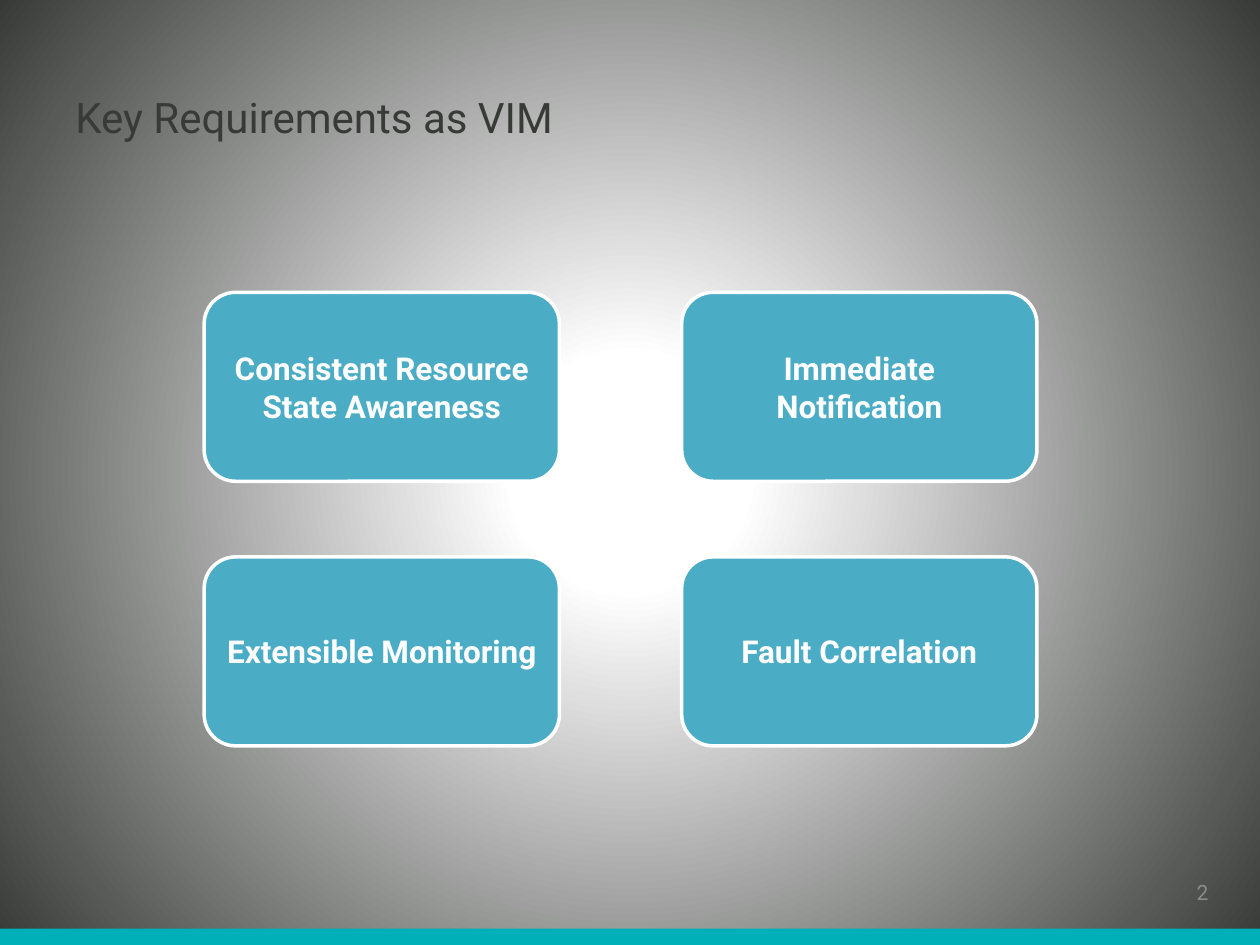
from itertools import product

from pptx import Presentation
from pptx.dml.color import RGBColor
from pptx.enum.shapes import MSO_SHAPE as Shape
from pptx.enum.text import MSO_ANCHOR as Anchor, PP_ALIGN as Align
from pptx.oxml import parse_xml
from pptx.oxml.ns import nsdecls
from pptx.util import Inches, Pt

WHITE = RGBColor(0xFF, 0xFF, 0xFF)
DARK = RGBColor(0x37, 0x3A, 0x36)
GRAY = RGBColor(0x8C, 0x8C, 0x8C)
TEAL = RGBColor(0x00, 0xB0, 0xB9)
BLUE = RGBColor(0x4B, 0xAC, 0xC6)

COLS, ROWS = 100, 75  # layout grid of the slide


class Deck:
    """Holds the style and the current slide; lengths are grid columns and rows."""

    font = "Roboto"

    def __init__(self, prs):
        self.col = prs.slide_width / COLS
        self.row = prs.slide_height / ROWS
        self.slide = prs.slides.add_slide(prs.slide_layouts[6])

    def place(self, x, y, w, h):
        return [int(v) for v in (x * self.col, y * self.row, w * self.col, h * self.row)]

    def background(self, inner, outer, start):
        """Radial gradient spreading from the middle of the slide."""
        self.slide.background.fill.solid()
        fill = self.slide.element.cSld.find(".//{*}bgPr/{*}solidFill")
        gradient = parse_xml(
            f'<a:gradFill {nsdecls("a")} rotWithShape="1"><a:gsLst>'
            f'<a:gs pos="{start * 1000}"><a:srgbClr val="{inner}"/></a:gs>'
            f'<a:gs pos="100000"><a:srgbClr val="{outer}"/></a:gs></a:gsLst>'
            '<a:path path="circle"><a:fillToRect l="50000" t="50000" r="50000" b="50000"/>'
            '</a:path></a:gradFill>')
        fill.getparent().replace(fill, gradient)

    def set_text(self, sp, text, color, size, align=Align.LEFT, anchor=Anchor.MIDDLE,
                 bold=False, inset=0.1):
        tf = sp.text_frame
        frame = {"word_wrap": True, "vertical_anchor": anchor,
                 "margin_left": Inches(inset), "margin_right": Inches(inset)}
        for name, value in frame.items():
            setattr(tf, name, value)
        p = tf.paragraphs[0]
        p.alignment = align
        r = p.add_run()
        r.text = text
        for name, value in {"name": self.font, "size": Pt(size), "bold": bold}.items():
            setattr(r.font, name, value)
        r.font.color.rgb = color

    def text(self, at, text, **style):
        self.set_text(self.slide.shapes.add_textbox(*self.place(*at)), text, **style)

    def shape(self, kind, at, fill, line=None):
        sp = self.slide.shapes.add_shape(kind, *self.place(*at))
        sp.shadow.inherit = False
        sp.fill.solid()
        sp.fill.fore_color.rgb = fill
        if line is None:
            sp.line.fill.background()
        else:
            sp.line.color.rgb = line
            sp.line.width = Pt(2)
        return sp

    def card(self, at, text):
        sp = self.shape(Shape.ROUNDED_RECTANGLE, at, BLUE, WHITE)
        self.set_text(sp, text, WHITE, 18, Align.CENTER, bold=True, inset=0.08)


def main():
    prs = Presentation()
    prs.slide_width, prs.slide_height = Inches(10), Inches(7.5)
    deck = Deck(prs)

    # Background and footer
    deck.background(WHITE, DARK, 15)
    deck.shape(Shape.RECTANGLE, (0, 73.7, COLS, 1.3), TEAL)
    deck.text((90.3, 67, 6.6, 5.3), "2", color=GRAY, size=12,
              align=Align.RIGHT, anchor=Anchor.BOTTOM)

    # Title
    deck.text((5, 3, 90, 12.5), "Key Requirements as VIM", color=DARK, size=24)

    # Two by two grid of requirements
    requirements = ["Consistent Resource State Awareness", "Immediate Notification",
                    "Extensible Monitoring", "Fault Correlation"]
    for (i, j), label in zip(product(range(2), repeat=2), requirements):
        deck.card((16.2 + 37.9 * j, 23.2 + 21 * i, 28.2, 15), label)

    prs.save("out.pptx")


if __name__ == "__main__":
    main()
